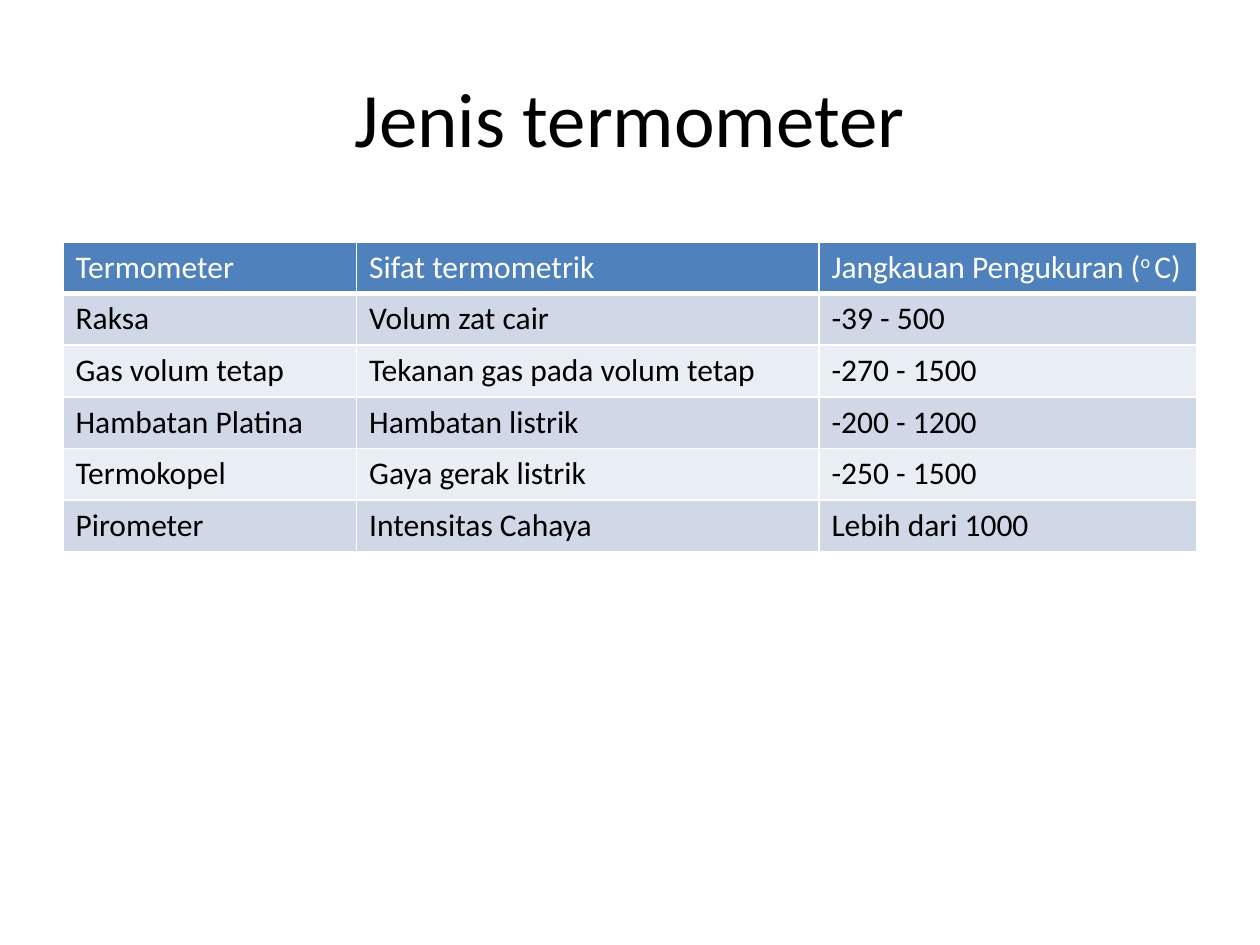
from dataclasses import dataclass

from lxml import etree
from pptx import Presentation
from pptx.dml import color
from pptx.enum import text
from pptx.oxml import ns
from pptx.util import Inches, Pt


@dataclass(frozen=True)
class Theme:
    font: str = "Calibri"
    title_size: int = 44
    body_size: int = 18
    ink: str = "000000"
    paper: str = "FFFFFF"
    header: str = "4F81BD"
    bands: tuple[str, str] = ("D0D8E8", "E9EDF4")
    border: int = 1
    header_border: int = 3


@dataclass(frozen=True)
class Span:
    words: str
    superscript: bool = False


@dataclass(frozen=True)
class Thermometer:
    name: str
    property: str
    range: str


THEME = Theme()
COLUMN_WIDTHS = (2.33, 3.67, 3)
ROW_HEIGHT = 0.41
HEADINGS = (
    (Span("Termometer"),),
    (Span("Sifat termometrik"),),
    (Span("Jangkauan Pengukuran ("), Span("o ", True), Span("C)")),
)
THERMOMETERS = (
    Thermometer("Raksa", "Volum zat cair", "-39 - 500"),
    Thermometer("Gas volum tetap", "Tekanan gas pada volum tetap", "-270 - 1500"),
    Thermometer("Hambatan Platina", "Hambatan listrik", "-200 - 1200"),
    Thermometer("Termokopel", "Gaya gerak listrik", "-250 - 1500"),
    Thermometer("Pirometer", "Intensitas Cahaya", "Lebih dari 1000"),
)


def apply_formats(target, formats: dict) -> None:
    for attribute, value in formats.items():
        setattr(target, attribute, value)


def write_spans(paragraph, spans: tuple[Span, ...], size: int, ink: str) -> None:
    for span in spans:
        run = paragraph.add_run()
        run.text = span.words
        apply_formats(run.font, {"name": THEME.font, "size": Pt(size), "bold": False})
        run.font.color.rgb = color.RGBColor.from_string(ink)
        if span.superscript:
            run._r.get_or_add_rPr().set("baseline", "30000")


def draw_borders(cell, bottom: int) -> None:
    properties = cell._tc.get_or_add_tcPr()
    widths = {"lnL": THEME.border, "lnR": THEME.border, "lnT": THEME.border, "lnB": bottom}
    for side, width in widths.items():
        line = etree.SubElement(properties, ns.qn(f"a:{side}"), w=str(Pt(width)))
        fill = etree.SubElement(line, ns.qn("a:solidFill"))
        etree.SubElement(fill, ns.qn("a:srgbClr"), val=THEME.paper)


def draw_row(table, row: int, entries: tuple, fill: str, ink: str, bottom: int) -> None:
    table.rows[row].height = Inches(ROW_HEIGHT)
    for column, spans in enumerate(entries):
        cell = table.cell(row, column)
        draw_borders(cell, bottom)
        cell.fill.solid()
        cell.fill.fore_color.rgb = color.RGBColor.from_string(fill)
        write_spans(cell.text_frame.paragraphs[0], spans, THEME.body_size, ink)


def draw_title(slide, words: str) -> None:
    title = slide.shapes.title
    apply_formats(title, {
        "left": Inches(0.5), "top": Inches(0.3),
        "width": Inches(9), "height": Inches(1.25),
    })
    title.text_frame.vertical_anchor = text.MSO_ANCHOR.MIDDLE
    paragraph = title.text_frame.paragraphs[0]
    paragraph.alignment = text.PP_ALIGN.CENTER
    write_spans(paragraph, (Span(words),), THEME.title_size, THEME.ink)


def draw_table(slide) -> None:
    row_count = len(THERMOMETERS) + 1
    table = slide.shapes.add_table(
        row_count, len(COLUMN_WIDTHS), Inches(0.5), Inches(1.92),
        Inches(sum(COLUMN_WIDTHS)), Inches(ROW_HEIGHT * row_count),
    ).table
    for column, width in zip(table.columns, COLUMN_WIDTHS):
        column.width = Inches(width)
    draw_row(table, 0, HEADINGS, THEME.header, THEME.paper, THEME.header_border)
    for index, thermometer in enumerate(THERMOMETERS):
        values = (thermometer.name, thermometer.property, thermometer.range)
        entries = tuple((Span(value),) for value in values)
        draw_row(table, index + 1, entries, THEME.bands[index % 2], THEME.ink, THEME.border)


def main() -> None:
    presentation = Presentation()
    apply_formats(presentation, {"slide_width": Inches(10), "slide_height": Inches(7.5)})
    slide = presentation.slides.add_slide(presentation.slide_layouts.get_by_name("Title Only"))
    draw_title(slide, "Jenis termometer")
    draw_table(slide)
    presentation.save("out.pptx")


if __name__ == "__main__":
    main()
